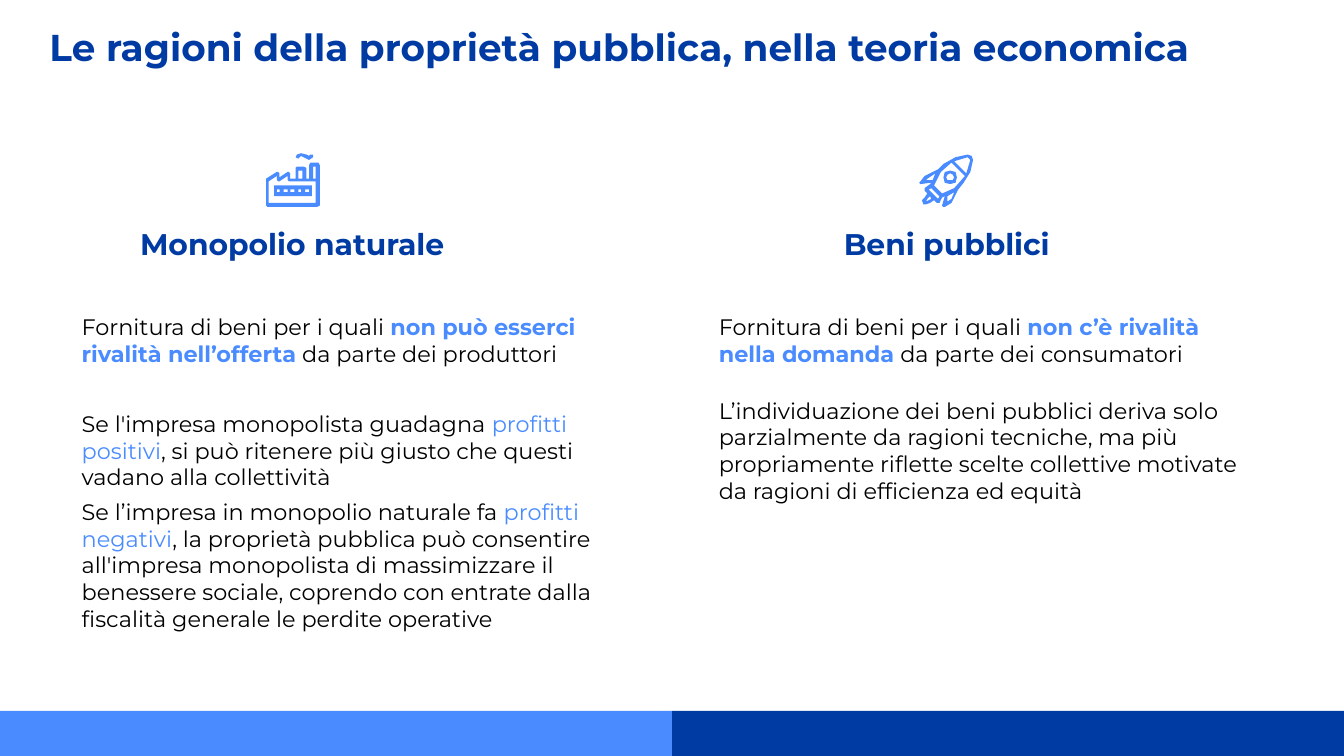
"""Build the slide on the reasons for public ownership in economic theory."""
from pptx import Presentation
from pptx import util as u
from pptx.dml.color import RGBColor
from pptx.enum import shapes, text

NAVY = RGBColor(0x00, 0x3B, 0xA3)
BLUE = RGBColor(0x4A, 0x8C, 0xFF)
BLACK = RGBColor(0x00, 0x00, 0x00)
TITLE = {"size": 20, "color": NAVY, "bold": True}
HEADING = {"size": 16, "color": NAVY, "bold": True}
STRONG = {"color": BLUE, "bold": True}
ACCENT = {"color": BLUE}
PLAIN = {}


def write(shape, paragraphs, align=text.PP_ALIGN.LEFT, gaps=(0,)):
    frame = shape.text_frame
    frame.word_wrap = True
    frame.auto_size = text.MSO_AUTO_SIZE.NONE
    frame.vertical_anchor = text.MSO_ANCHOR.TOP
    frame.margin_left = frame.margin_right = u.Inches(0.1)
    frame.margin_top = frame.margin_bottom = u.Inches(0.1)
    for index, (spans, gap) in enumerate(zip(paragraphs, gaps)):
        para = frame.add_paragraph() if index else frame.paragraphs[0]
        para.alignment = align
        para.space_before = u.Pt(gap)
        for wording, style in spans:
            span = para.add_run()
            span.text = wording
            span.font.name = "Montserrat"
            span.font.size = u.Pt(style.get("size", 12))
            span.font.bold = style.get("bold", False)
            span.font.color.rgb = style.get("color", BLACK)


def rectangle(left, top, right, bottom):
    return [(left, top), (right, top), (right, bottom), (left, bottom)]


deck = Presentation()
deck.slide_width = u.Inches(10)
deck.slide_height = deck.slide_width * 9 // 16
page = deck.slides.add_slide(deck.slide_layouts[5])

bar_top = u.Inches(5.29)
for left, color in ((5, NAVY), (0, BLUE)):
    bar = page.shapes.add_shape(shapes.MSO_SHAPE.RECTANGLE, u.Inches(left), bar_top,
                                u.Inches(5), deck.slide_height - bar_top)
    bar.shadow.inherit = False
    bar.fill.solid()
    bar.fill.fore_color.rgb = color
    bar.line.fill.background()

title = page.shapes.title
title.left, title.top = u.Inches(0), u.Inches(0.08)
title.width, title.height = u.Inches(9.22), u.Inches(0.63)
write(title, [[("Le ragioni della proprietà pubblica, nella teoria economica", TITLE)]],
      align=text.PP_ALIGN.CENTER)

columns = [
    ("Monopolio naturale", 0.94, (0.51, 4.24, 2.5), (0, 23, 4), [
        [("Fornitura di beni per i quali ", PLAIN),
         ("non può esserci rivalità nell’offerta", STRONG),
         (" da parte dei produttori", PLAIN)],
        [("Se l'impresa monopolista guadagna ", PLAIN),
         ("profitti positivi", ACCENT),
         (", si può ritenere più giusto che questi vadano alla collettività", PLAIN)],
        [("Se l’impresa in monopolio naturale fa ", PLAIN),
         ("profitti negativi", ACCENT),
         (", la proprietà pubblica può consentire all'impresa monopolista di "
          "massimizzare il benessere sociale, coprendo con entrate dalla "
          "fiscalità generale le perdite operative", PLAIN)],
    ]),
    ("Beni pubblici", 5.81, (5.25, 4.16, 1.78), (0, 16), [
        [("Fornitura di beni per i quali ", PLAIN),
         ("non c’è rivalità nella domanda", STRONG),
         (" da parte dei consumatori", PLAIN)],
        [("L’individuazione dei beni pubblici deriva solo parzialmente da ragioni "
          "tecniche, ma più propriamente riflette scelte collettive motivate da "
          "ragioni di efficienza ed equità", PLAIN)],
    ]),
]
for heading, heading_left, (left, width, height), gaps, paragraphs in columns:
    box = page.shapes.add_textbox(u.Inches(heading_left), u.Inches(1.58),
                                  u.Inches(2.47), u.Inches(0.45))
    write(box, [[(heading, HEADING)]], align=text.PP_ALIGN.CENTER)
    box = page.shapes.add_textbox(u.Inches(left), u.Inches(2.23),
                                  u.Inches(width), u.Inches(height))
    write(box, paragraphs, gaps=gaps)

rocket_body = [
    [(720, 115), (711, 117), (702, 122), (698, 126), (688, 131), (684, 136),
     (685, 137), (692, 136), (693, 136), (692, 137), (688, 140), (688, 142),
     (690, 144), (688, 147), (686, 149), (687, 152), (689, 152), (692, 151),
     (695, 149), (697, 151), (699, 151), (701, 147), (703, 146), (701, 153),
     (702, 154), (703, 154), (708, 151), (713, 141), (717, 136), (722, 128),
     (724, 119), (723, 116)],
    [(720, 117), (721, 118), (722, 119), (719, 129), (710, 120)],
    [(696, 129), (694, 134), (692, 134), (689, 134), (690, 133)],
    [(708, 121), (718, 131), (710, 140), (701, 144), (695, 138), (700, 128)],
    [(693, 140), (699, 146), (698, 148), (691, 141)],
    [(692, 146), (693, 148), (691, 149), (689, 150), (690, 148)],
    [(710, 143), (708, 148), (705, 150), (705, 146)],
]
porthole = [
    [(707, 127), (703, 128), (701.5, 132), (703, 136), (707, 137),
     (711, 136), (712.5, 132), (711, 128)],
    [(707, 129), (709, 130), (710, 132), (709, 134), (707, 134.5),
     (705, 134), (704, 132), (705, 130)],
]
window_band = [rectangle(204, 138, 232, 146)]
window_band += [rectangle(left, 141, left + 2.5, 143)
                for left in (206, 211.25, 216.5, 221.75, 227)]
factory_walls = [
    [(231, 121), (230, 123), (230, 133), (228, 133), (228, 125), (226, 124),
     (221, 124), (220, 125), (220, 133), (216, 133), (216, 129), (215, 128),
     (214, 128), (208, 132), (208, 129), (207, 128), (206, 128), (198, 133),
     (198, 153), (199, 154), (236, 154), (238, 153), (238, 123), (237, 121)],
    rectangle(222, 127, 225, 133),
    rectangle(233, 124, 235, 133),
    [(214, 131), (214, 134), (215, 135), (235, 135), (235, 151), (200, 151),
     (200, 135), (206, 131), (206, 134), (207, 135), (208, 135)],
]
smoke = [[(224, 114), (221, 115), (220.5, 117), (222, 118), (224, 116), (226, 117),
          (230, 119), (233, 117), (233, 115), (231, 115), (230, 116), (228, 115)]]

for icon in ([rocket_body, porthole], [window_band, factory_walls, smoke]):
    group = page.shapes.add_group_shape()
    for contours in icon:
        builder = group.shapes.build_freeform(*contours[0][0], scale=u.Inches(0.01))
        for index, points in enumerate(contours):
            if index:
                builder.move_to(*points[0])
            builder.add_line_segments(points[1:], close=True)
        outline = builder.convert_to_shape()
        outline.shadow.inherit = False
        outline.fill.solid()
        outline.fill.fore_color.rgb = BLUE
        outline.line.fill.background()

deck.save("out.pptx")
